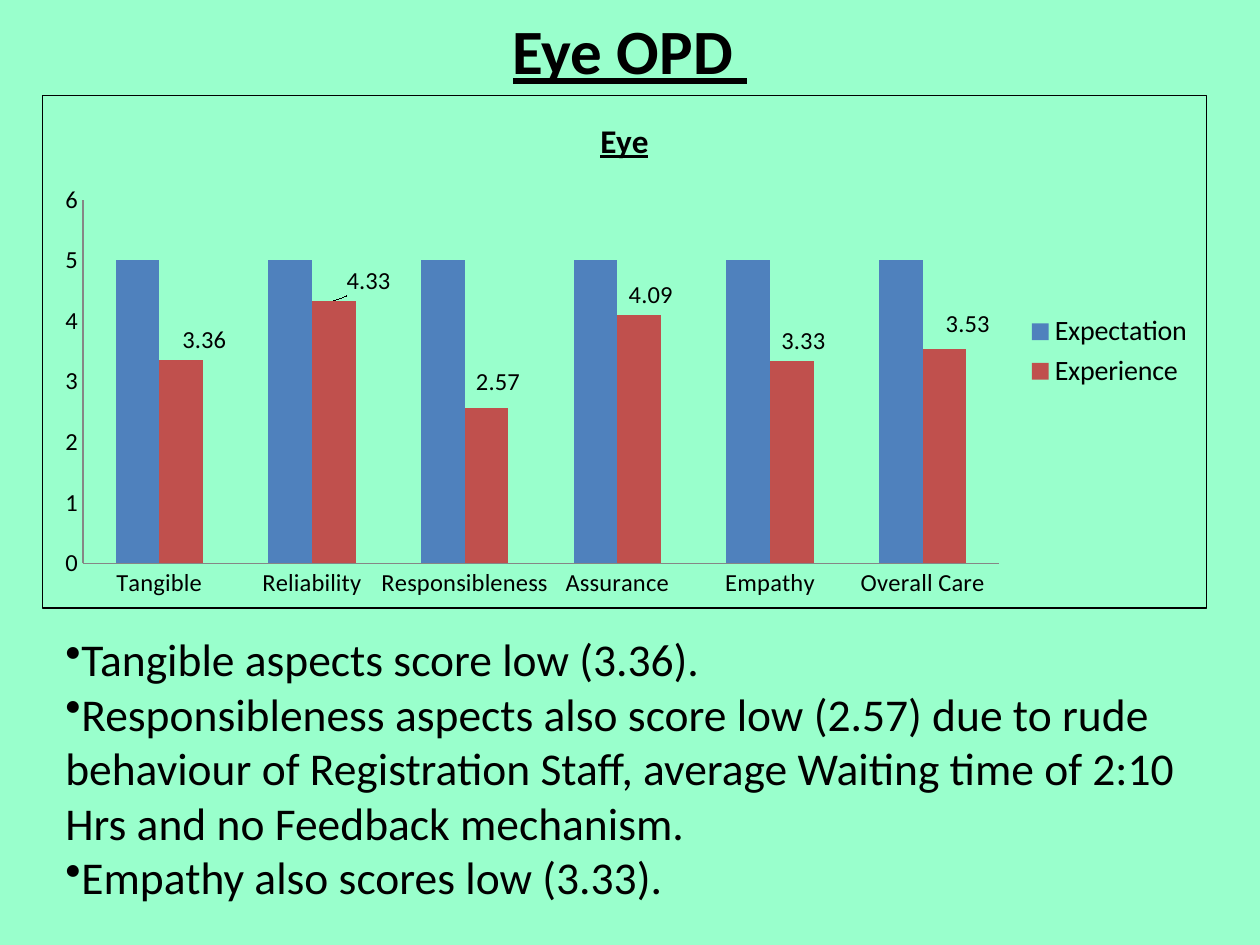
import pptx
import pptx.util
import pptx.chart.data
import pptx.dml.color
import pptx.enum.chart
import pptx.enum.text
import pptx.oxml
import pptx.oxml.ns

FONT = "Calibri"
COLORS = {"back": "99FFCC", "text": "000000", "axis": "868686",
          "Expectation": "4F81BD", "Experience": "C0504D"}
HEAD = "Eye OPD "
NOTES = [
    "Tangible aspects score low (3.36).",
    "Responsibleness aspects also score low (2.57) due to rude behaviour of "
    "Registration Staff, average Waiting time of 2:10 Hrs and no Feedback mechanism.",
    "Empathy also scores low (3.33).",
]
# category, expectation, experience, label shift as shares of the chart
SCORES = [
    ("Tangible", 5, 3.36, (0.02, 0)),
    ("Reliability", 5, 4.33, (0.03, 0)),
    ("Responsibleness", 5, 2.57, (0.01, -0.01)),
    ("Assurance", 5, 4.09, (0.01, 0)),
    ("Empathy", 5, 3.33, (0.01, 0)),
    ("Overall Care", 5, 3.53, (0.02, -0.01)),
]
BOXES = {"head": (0.5, 0.08, 9, 0.62), "chart": (0.33, 0.75, 9.25, 4.08),
         "notes": (0.42, 4.96, 9.17, 2.29)}
PLOT = {"x": 0.035, "y": 0.204, "w": 0.787, "h": 0.709}


def color(key):
    return pptx.dml.color.RGBColor.from_string(COLORS[key])


def place(key):
    return [pptx.util.Inches(v) for v in BOXES[key]]


def style(font, size, bold=False, line=False):
    font.name, font.size = FONT, pptx.util.Pt(size)
    font.bold, font.underline = bold, line
    font.color.rgb = color("text")


def layout(**parts):
    """Return a manual chart layout; a plot area is given by x, y, w, h."""
    mode = "".join(f'<c:{k}Mode val="edge"/>' for k in "xy") if "w" in parts else ""
    inner = '<c:layoutTarget val="inner"/>' if mode else ""
    vals = "".join(f'<c:{k} val="{v}"/>' for k, v in parts.items())
    return pptx.oxml.parse_xml(
        f'<c:layout {pptx.oxml.ns.nsdecls("c")}><c:manualLayout>'
        f'{inner}{mode}{vals}</c:manualLayout></c:layout>')


def add_text(slide, key, lines, size, **look):
    frame = slide.shapes.add_textbox(*place(key)).text_frame
    frame.word_wrap = True
    frame.text = "\n".join(lines)
    for para in frame.paragraphs:
        for run in para.runs:
            style(run.font, size, **look)
    return frame


def add_chart(slide):
    kinds = pptx.enum.chart
    names, hopes, marks, shifts = zip(*SCORES)
    data = pptx.chart.data.CategoryChartData()
    data.categories = names
    data.add_series("Expectation", hopes)
    data.add_series("Experience", marks)
    chart = slide.shapes.add_chart(
        kinds.XL_CHART_TYPE.COLUMN_CLUSTERED, *place("chart"), data).chart
    style(chart.font, 16)

    chart.has_title = True
    title = chart.chart_title.text_frame
    title.text = "Eye"
    style(title.paragraphs[0].runs[0].font, 19, bold=True, line=True)

    chart.has_legend = True
    chart.legend.position = kinds.XL_LEGEND_POSITION.RIGHT
    chart.legend.include_in_layout = False
    style(chart.legend.font, 16)

    for axis in (chart.category_axis, chart.value_axis):
        axis.major_tick_mark = axis.minor_tick_mark = kinds.XL_TICK_MARK.NONE
        axis.has_major_gridlines = False
        axis.format.line.color.rgb = color("axis")
        style(axis.tick_labels.font, 14)
    chart.value_axis.minimum_scale, chart.value_axis.maximum_scale = 0, 6
    chart.value_axis.major_unit = 1

    plot = chart.plots[0]
    plot.gap_width, plot.overlap, plot.vary_by_categories = 150, 0, False
    for series in plot.series:
        series.format.fill.solid()
        series.format.fill.fore_color.rgb = color(series.name)
    for i, (x, y) in enumerate(shifts):
        label = plot.series[1].points[i].data_label
        style(label.font, 14)
        label.position = kinds.XL_LABEL_POSITION.OUTSIDE_END
    tags = plot.series[1].data_labels
    tags.show_value = True
    tags.position = kinds.XL_LABEL_POSITION.OUTSIDE_END
    style(tags.font, 14)

    space = chart.element
    find = pptx.oxml.ns.qn
    for node, (x, y) in zip(space.iter(find("c:dLbl")), shifts):
        node.insert(1, layout(x=x, y=y))
    area = next(space.iter(find("c:plotArea")))
    for old in area.findall(find("c:layout")):
        area.remove(old)
    area.insert(0, layout(**PLOT))
    space.find(find("c:chart")).addnext(pptx.oxml.parse_xml(
        f'<c:spPr {pptx.oxml.ns.nsdecls("c", "a")}><a:noFill/><a:ln w="9525">'
        f'<a:solidFill><a:srgbClr val="{COLORS["text"]}"/></a:solidFill>'
        '</a:ln></c:spPr>'))


def main():
    deck = pptx.Presentation()
    deck.slide_width, deck.slide_height = pptx.util.Inches(10), pptx.util.Inches(7.5)
    slide = deck.slides.add_slide(deck.slide_layouts[6])
    slide.background.fill.solid()
    slide.background.fill.fore_color.rgb = color("back")

    head = add_text(slide, "head", [HEAD], 36, bold=True, line=True)
    head.vertical_anchor = pptx.enum.text.MSO_ANCHOR.MIDDLE
    head.paragraphs[0].alignment = pptx.enum.text.PP_ALIGN.CENTER

    for para in add_text(slide, "notes", NOTES, 26).paragraphs:
        para._p.get_or_add_pPr().append(pptx.oxml.parse_xml(
            f'<a:buChar {pptx.oxml.ns.nsdecls("a")} char="•"/>'))

    add_chart(slide)
    deck.save("out.pptx")


if __name__ == "__main__":
    main()
